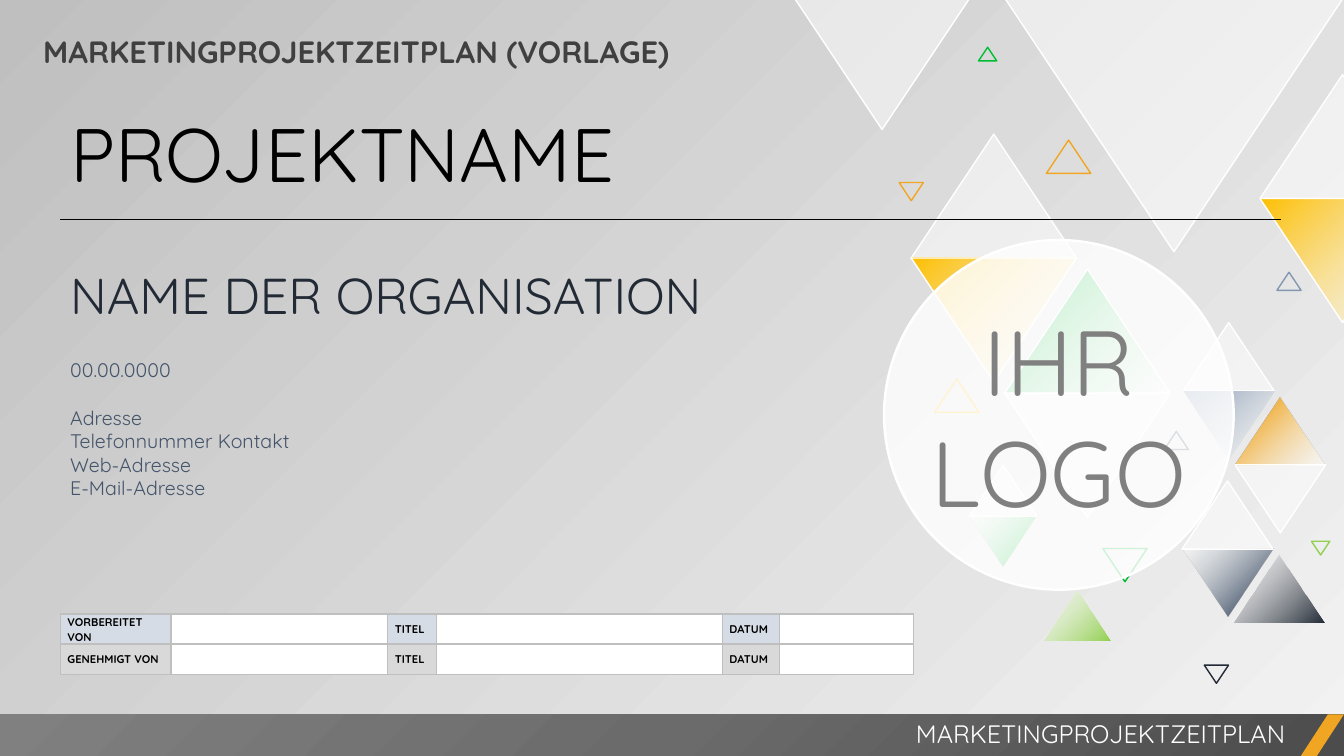
from collections import namedtuple

from lxml import etree
from pptx import Presentation, util as u
from pptx.dml.color import RGBColor
from pptx.enum import shapes, text
from pptx.oxml import ns

Box = namedtuple("Box", "left top width height")
FONT = "Quicksand"
COLORS = {
    "white": "FFFFFF", "black": "000000", "ink": "222A35", "slate": "44546A",
    "steel": "8497B0", "green": "00BD32", "lime": "92D050", "gold": "FFC000",
    "orange": "F0A622", "title": "404040", "logo": "808080", "border": "BFBFBF",
    "head_blue": "D6DCE5", "head_gray": "D9D9D9", "light": "F2F2F2",
    "band_dark": "4C4C4C", "band_mid": "6B6B6B", "band_light": "808080",
}
PANE = [(0, "white", 50)]


def fade_from(color):
    return [(0, color, 100), (100, "white", 50)]


def fade_to(color):
    return [(0, "white", 50), (82, color, 100)]


def rgb(name):
    return RGBColor.from_string(COLORS[name])


def add(parent, tag, **attributes):
    return etree.SubElement(parent, ns.qn(tag), {k: str(v) for k, v in attributes.items()})


def add_color(parent, name, opacity=100):
    color = add(parent, "a:srgbClr", val=COLORS[name])
    if opacity < 100:
        add(color, "a:alpha", val=opacity * 1000)


def paint(fill, owner, stops, angle=225):
    """Fill with one colour or a gradient; no angle means from the lower right corner."""
    if len(stops) == 1:
        _, name, opacity = stops[0]
        fill.solid()
        fill.fore_color.rgb = rgb(name)
        if opacity < 100:
            add(owner.xpath(".//a:solidFill/a:srgbClr")[0], "a:alpha", val=opacity * 1000)
        return
    fill.gradient()
    gradient = owner.xpath(".//a:gradFill")[0]
    for child in list(gradient):
        gradient.remove(child)
    stop_list = add(gradient, "a:gsLst")
    for position, name, opacity in stops:
        add_color(add(stop_list, "a:gs", pos=position * 1000), name, opacity)
    if angle is None:
        add(add(gradient, "a:path", path="circle"), "a:fillToRect", l=100000, t=100000)
    else:
        add(gradient, "a:lin", ang=angle * 60000, scaled=0)


def add_figure(owner, kind, box, stops=None, line=None, weight=1, angle=225):
    figure = owner.shapes.add_shape(kind, *map(u.Cm, box))
    figure.shadow.inherit = False
    if stops:
        paint(figure.fill, figure._element, stops, angle)
    else:
        figure.fill.background()
    if line:
        figure.line.color.rgb = rgb(line)
        figure.line.width = u.Pt(weight)
    else:
        figure.line.fill.background()
    return figure


def style(para, size, color, bold=False):
    for span in para.runs:
        span.font.name = FONT
        span.font.size = u.Pt(size)
        span.font.bold = bold
        span.font.color.rgb = rgb(color)


def add_text(page, box, lines, align=text.PP_ALIGN.LEFT):
    """Each line is wording, size, colour, bold and space before in points."""
    frame = page.shapes.add_textbox(*map(u.Cm, box)).text_frame
    frame.word_wrap = True
    frame.auto_size = text.MSO_AUTO_SIZE.SHAPE_TO_FIT_TEXT
    frame.text = "\n".join(line[0] for line in lines)
    for para, (_, size, color, bold, space) in zip(frame.paragraphs, lines):
        para.alignment = align
        para.space_before = u.Pt(space)
        style(para, size, color, bold)


def add_pattern(page, box):
    up, down = 0, 180
    large, medium, small = 4.17, 2.29, 1.7
    filled = [
        (22.96, 3.38, large, up, PANE, "white"),
        (22.96, 6.5, large, down, fade_from("gold"), "white"),
        (25.32, 6.78, large, up, fade_to("green"), "white"),
        (25.32, 9.91, large, down, PANE, "white"),
        (25.32, -0.05, 8.53, down, PANE, "white"),
        (31.09, 13.97, medium, up, fade_from("ink"), None),
        (29.79, 13.82, medium, down, fade_to("slate"), None),
        (29.79, 12.12, medium, up, PANE, "white"),
        (29.82, 8.13, medium, up, PANE, "white"),
        (29.82, 9.86, medium, down, fade_from("steel"), None),
        (31.12, 10.01, medium, up, fade_to("orange"), None),
        (31.12, 11.71, medium, down, PANE, "white"),
        (26.29, 14.86, small, up, fade_from("lime"), None),
        (24.43, 13, small, down, fade_to("green"), None),
        (24.43, 11.73, small, up, PANE, "white"),
        (31.75, 1.88, large, up, PANE, "white"),
        (31.75, 5, large, down, fade_from("gold"), "white"),
        (20.02, -0.05, 4.42, down, PANE, "white"),
    ]
    outlined = [
        (27.79, 13.82, 1.12, down, None, "green"),
        (23.55, 9.55, 1.12, up, None, "gold"),
        (29.34, 10.87, 0.61, up, None, "slate"),
        (30.35, 16.76, 0.61, down, None, "ink"),
        (22.66, 4.6, 0.61, down, None, "orange"),
        (32.18, 6.86, 0.61, up, None, "steel"),
        (24.66, 1.19, 0.46, up, None, "green"),
        (33.05, 13.64, 0.46, down, None, "lime"),
        (26.37, 3.53, 1.12, up, None, "orange"),
    ]
    group = page.shapes.add_group_shape()
    for left, top, width, turn, stops, line in filled + outlined:
        place = Box(box.left + left, box.top + top, width, width * 0.75)
        kind = shapes.MSO_SHAPE.ISOSCELES_TRIANGLE
        add_figure(group, kind, place, stops, line).rotation = turn


def add_footer(page, box):
    stops = [(0, "band_dark", 100), (50, "band_mid", 100), (100, "band_light", 100)]
    add_figure(page, shapes.MSO_SHAPE.RECTANGLE, box, stops, angle=None)
    accent_box = Box(box.left + box.width - 1.1, box.top, 1.1, box.height)
    accent = add_figure(page, shapes.MSO_SHAPE.PARALLELOGRAM, accent_box, [(0, "orange", 100)])
    accent.adjustments[0] = 0.65
    add_text(page, Box(box.left + 13.34, box.top - 0.03, 19.3, 1.02),
             [("MARKETINGPROJEKTZEITPLAN", 18, "white", False, 0)], text.PP_ALIGN.RIGHT)


def add_project(page, box):
    add_text(page, Box(box.left, box.top, box.width, 2.57),
             [("PROJEKTNAME", 54, "black", False, 0)])
    contacts = ["Telefonnummer Kontakt", "Web-Adresse", "E-Mail-Adresse"]
    add_text(page, Box(box.left, box.top + 3.96, 22.61, 6.25), [
        ("NAME DER ORGANISATION", 36, "ink", False, 0),
        ("00.00.0000", 14, "slate", False, 24),
        ("Adresse", 14, "slate", False, 17),
        *[(contact, 14, "slate", False, 0) for contact in contacts],
    ])
    height = u.Cm(box.top + 2.97)
    rule = page.shapes.add_connector(shapes.MSO_CONNECTOR.STRAIGHT, u.Cm(box.left), height,
                                     u.Cm(box.left + 30.76), height)
    rule.line.color.rgb = rgb("black")
    rule.line.width = u.Pt(0.5)
    add(rule._element.spPr, "a:effectLst")


def add_logo_disc(page, box):
    disc = add_figure(page, shapes.MSO_SHAPE.OVAL, box, [(0, "white", 81)], "white", 1.75)
    frame = disc.text_frame
    frame.margin_left = frame.margin_top = frame.margin_right = frame.margin_bottom = 0
    frame.word_wrap = False
    frame.vertical_anchor = text.MSO_ANCHOR.MIDDLE
    frame.text = "IHR\nLOGO"
    for para in frame.paragraphs:
        para.alignment = text.PP_ALIGN.CENTER
        style(para, 66, "logo")


def add_borders(cell):
    properties = cell._tc.get_or_add_tcPr()
    for position, side in enumerate(("a:lnL", "a:lnR", "a:lnT", "a:lnB")):
        border = add(properties, side, w=u.Pt(1))
        add_color(add(border, "a:solidFill"), "border")
        properties.insert(position, border)


def add_approvals(page, box):
    widths = [2.79, 5.46, 1.24, 7.19, 1.45, 3.38]
    rows = [("VORBEREITET VON", "head_blue"), ("GENEHMIGT VON", "head_gray")]
    table = page.shapes.add_table(len(rows), len(widths), *map(u.Cm, box)).table
    table.first_row = table.horz_banding = False
    for column, width in zip(table.columns, widths):
        column.width = u.Cm(width)
    for row, (role, shade) in zip(table.rows, rows):
        row.height = u.Cm(box.height / len(rows))
        for cell, label in zip(row.cells, (role, "", "TITEL", "", "DATUM", "")):
            cell.margin_left = cell.margin_right = u.Cm(0.18)
            cell.margin_top = cell.margin_bottom = 0
            cell.vertical_anchor = text.MSO_ANCHOR.MIDDLE
            cell.fill.solid()
            cell.fill.fore_color.rgb = rgb(shade if label else "white")
            add_borders(cell)
            para = cell.text_frame.paragraphs[0]
            if label:
                para.text = label
                para.line_spacing = 1.07
                style(para, 8, "black", True)
            else:
                add(para._p, "a:endParaRPr", sz=800)


def main():
    deck = Presentation()
    deck.slide_width, deck.slide_height = u.Cm(33.87), u.Cm(19.05)
    page = deck.slides.add_slide(deck.slide_layouts[6])
    paint(page.background.fill, page._element, [(0, "light", 40), (100, "border", 100)])
    add_pattern(page, Box(0, 0, 33.87, 19.05))
    add_text(page, Box(0.84, 0.71, 21.87, 1.19),
             [("MARKETINGPROJEKTZEITPLAN (VORLAGE)", 22, "title", True, 0)])
    add_footer(page, Box(0, 18, 33.87, 1.07))
    add_project(page, Box(1.52, 2.57, 31.17, 10.21))
    add_logo_disc(page, Box(22.28, 6.05, 8.81, 8.81))
    add_approvals(page, Box(1.52, 15.47, 21.51, 1.52))
    deck.save("out.pptx")


if __name__ == "__main__":
    main()
